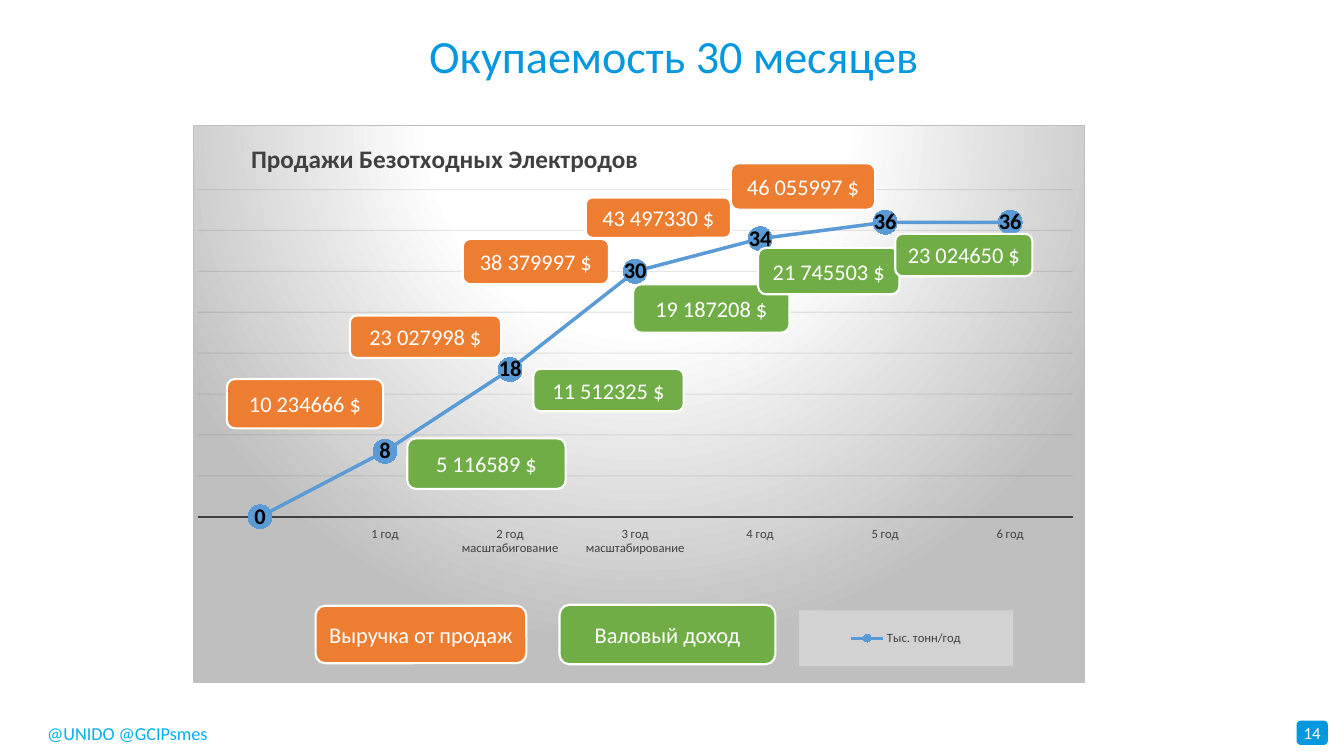
from dataclasses import dataclass

from lxml import etree
from pptx import Presentation
from pptx.chart.data import CategoryChartData
from pptx.dml.color import RGBColor
from pptx.enum.chart import (XL_CHART_TYPE, XL_LABEL_POSITION, XL_LEGEND_POSITION,
                             XL_MARKER_STYLE, XL_TICK_LABEL_POSITION, XL_TICK_MARK)
from pptx.enum.shapes import MSO_SHAPE
from pptx.enum.text import MSO_ANCHOR, PP_ALIGN
from pptx.oxml import parse_xml
from pptx.oxml.ns import qn
from pptx.util import Inches, Pt

LINE_CHART = XL_CHART_TYPE.LINE_MARKERS
CENTER_LABEL = XL_LABEL_POSITION.CENTER
BOTTOM = XL_LEGEND_POSITION.BOTTOM
CIRCLE = XL_MARKER_STYLE.CIRCLE
LOW = XL_TICK_LABEL_POSITION.LOW
NO_TICK = XL_TICK_MARK.NONE
ROUND = MSO_SHAPE.ROUNDED_RECTANGLE
MIDDLE = MSO_ANCHOR.MIDDLE
LEFT, CENTER = PP_ALIGN.LEFT, PP_ALIGN.CENTER
SPACES = ('xmlns:c="http://schemas.openxmlformats.org/drawingml/2006/chart" '
          'xmlns:a="http://schemas.openxmlformats.org/drawingml/2006/main"')


@dataclass(frozen=True)
class Theme:
    """Colours, font and type sizes of the slide."""
    font: str = "Calibri"
    head: str = "0698DF"
    foot: str = "00B0F0"
    white: str = "FFFFFF"
    black: str = "000000"
    ink: str = "404040"
    grid: str = "0D0D0D"
    gray: str = "BFBFBF"
    pale: str = "F2F2F2"
    blue: str = "5B9BD5"
    orange: str = "ED7D31"
    green: str = "70AD47"
    head_size: float = 33
    chart_size: float = 18
    body_size: float = 16
    foot_size: float = 13
    page_size: float = 12
    base_size: float = 10
    axis_size: float = 9


THEME = Theme()
YEARS = ["", "1 год", "2 год масштабигование", "3 год масштабирование",
         "4 год", "5 год", "6 год"]
TONS = [0, 8, 18, 30, 34, 36, 36]
SALES = [
    ("10 234666 $", (0.34, 2.52, 1.55, 0.49)),
    ("23 027998 $", (1.56, 1.89, 1.5, 0.42)),
    ("38 379997 $", (2.68, 1.13, 1.45, 0.45)),
    ("43 497330 $", (3.9, 0.72, 1.44, 0.4)),
    ("46 055997 $", (5.34, 0.38, 1.43, 0.46)),
    ("Выручка от продаж", (1.22, 4.77, 2.09, 0.57)),
]
GROSS = [
    ("5 116589 $", (2.13, 3.11, 1.57, 0.5)),
    ("11 512325 $", (3.38, 2.42, 1.49, 0.42)),
    ("19 187208 $", (4.37, 1.58, 1.55, 0.48)),
    ("21 745503 $", (5.61, 1.22, 1.4, 0.46)),
    ("23 024650 $", (6.97, 1.08, 1.36, 0.42)),
    ("Валовый доход", (3.64, 4.76, 2.14, 0.59)),
]


def rgb(code):
    """Turn a hex code into a colour."""
    return RGBColor.from_string(code)


def style(font, size, color, bold=False):
    """Set face, size, colour and weight of a font."""
    font.name, font.size, font.bold = THEME.font, Pt(size), bold
    font.color.rgb = rgb(color)


def write(frame, text, size, color, align=CENTER, wrap=True):
    """Put one run of text into a frame."""
    frame.word_wrap = wrap
    frame.vertical_anchor = MIDDLE
    para = frame.paragraphs[0]
    para.alignment = align
    run = para.add_run()
    run.text = text
    style(run.font, size, color)
    return para


def add_text(slide, box, *args, **opts):
    """Add a text box and return its paragraph."""
    shape = slide.shapes.add_textbox(*map(Inches, box))
    return write(shape.text_frame, *args, **opts)


def add_badge(slide, box, text, fill, size, edge=None):
    """Add a filled rounded box with centred text."""
    shape = slide.shapes.add_shape(ROUND, *map(Inches, box))
    shape.shadow.inherit = False
    shape.fill.solid()
    shape.fill.fore_color.rgb = rgb(fill)
    if edge:
        shape.line.color.rgb = rgb(edge)
        shape.line.width = Pt(1.5)
    else:
        shape.line.fill.background()
    frame = shape.text_frame
    frame.margin_left = frame.margin_right = 0
    frame.margin_top = frame.margin_bottom = 0
    write(frame, text, size, THEME.white)


def set_place(node, index, spots, inner=False):
    """Give a chart part a manual layout."""
    for old in node.findall(qn("c:layout")):
        node.remove(old)
    target = '<c:layoutTarget val="inner"/>' if inner else ""
    modes = '<c:xMode val="edge"/><c:yMode val="edge"/>'
    sides = "".join(f'<c:{key} val="{val}"/>' for key, val in zip("xywh", spots))
    node.insert(index, parse_xml(
        f"<c:layout {SPACES}><c:manualLayout>{target}{modes}{sides}"
        "</c:manualLayout></c:layout>"))


def set_look(prior, body):
    """Add shape properties after a chart part."""
    prior.addnext(parse_xml(f"<c:spPr {SPACES}>{body}</c:spPr>"))


def style_axes(chart):
    """Format the year axis and the grid."""
    years = chart.category_axis
    years.major_tick_mark = years.minor_tick_mark = NO_TICK
    years.tick_label_position = LOW
    style(years.tick_labels.font, THEME.axis_size, THEME.ink)
    years.format.line.color.rgb = rgb(THEME.ink)
    years.format.line.width = Pt(1.5)
    tons = chart.value_axis
    tons.minimum_scale, tons.maximum_scale, tons.major_unit = 0, 40, 5
    tons.visible = False
    line = tons.major_gridlines.format.line
    line.color.rgb = rgb(THEME.grid)
    line.width = Pt(0.75)
    for tint in chart.element.xpath(".//c:majorGridlines//a:srgbClr"):
        etree.SubElement(tint, qn("a:alpha")).set("val", "10000")


def style_line(chart):
    """Format the line, its markers and its labels."""
    series = chart.plots[0].series[0]
    series.smooth = False
    series.format.line.color.rgb = rgb(THEME.blue)
    series.format.line.width = Pt(2.5)
    mark = series.marker
    mark.style, mark.size = CIRCLE, 17
    mark.format.fill.solid()
    mark.format.fill.fore_color.rgb = rgb(THEME.blue)
    mark.format.line.fill.background()
    labels = series.data_labels
    labels.show_value = True
    labels.position = CENTER_LABEL
    style(labels.font, THEME.body_size, THEME.black, True)


def style_frame(chart):
    """Set title, legend, plot area and backdrop."""
    chart.has_title = True
    run = chart.chart_title.text_frame.paragraphs[0].add_run()
    run.text = "Продажи Безотходных Электродов"
    style(run.font, THEME.chart_size, THEME.ink, True)
    chart.chart_title.include_in_layout = False
    chart.has_legend = True
    legend = chart.legend
    legend.position = BOTTOM
    legend.include_in_layout = False
    style(legend.font, THEME.axis_size, THEME.ink)
    root = chart.element.find(qn("c:chart"))
    key = root.find(qn("c:legend"))
    set_place(root.find(qn("c:title")), 1, (0.06, 0.02))
    set_place(key, 1, (0.68, 0.87, 0.24, 0.1))
    set_place(root.find(qn("c:plotArea")), 0, (0.005, 0.115, 0.982, 0.587), True)
    set_look(key.find(qn("c:overlay")),
             f'<a:solidFill><a:srgbClr val="{THEME.pale}"><a:alpha val="39000"/>'
             "</a:srgbClr></a:solidFill><a:ln><a:noFill/></a:ln>")
    stops = "".join(f'<a:gs pos="{pos}"><a:srgbClr val="{tint}"/></a:gs>' for pos, tint in
                    ((0, THEME.white), (39000, THEME.white), (100000, THEME.gray)))
    set_look(root, f'<a:gradFill><a:gsLst>{stops}</a:gsLst><a:path path="circle">'
             '<a:fillToRect l="50000" t="-80000" r="50000" b="180000"/></a:path></a:gradFill>'
             f'<a:ln w="9525"><a:solidFill><a:srgbClr val="{THEME.gray}"/></a:solidFill></a:ln>')


def add_sales(slide, box):
    """Add the sales chart with its money badges."""
    data = CategoryChartData()
    data.categories = YEARS
    data.add_series("Тыс. тонн/год", TONS)
    chart = slide.shapes.add_chart(LINE_CHART, *map(Inches, box), data).chart
    style(chart.font, THEME.base_size, THEME.black)
    chart.plots[0].vary_by_categories = False
    style_axes(chart)
    style_line(chart)
    style_frame(chart)
    for fill, group in ((THEME.orange, SALES), (THEME.green, GROSS)):
        for text, (left, top, wide, high) in group:
            spot = (box[0] + left, box[1] + top, wide, high)
            add_badge(slide, spot, text, fill, THEME.body_size, THEME.white)


def add_foot(slide, box):
    """Add the handles and the page number."""
    left, top, wide, high = box
    add_text(slide, (left, top, 1.81, high), "@UNIDO @GCIPsmes",
             THEME.foot_size, THEME.foot, LEFT, False)
    add_badge(slide, (left + wide - 0.31, top + 0.04, 0.31, 0.24), "14",
              THEME.head, THEME.page_size)


def main():
    """Build and save the slide."""
    deck = Presentation()
    deck.slide_width, deck.slide_height = Inches(13.33), Inches(7.5)
    slide = deck.slides.add_slide(deck.slide_layouts[6])
    add_foot(slide, (0.37, 7.11, 12.8, 0.32))
    head = add_text(slide, (3.13, 0.21, 7.11, 0.75), "Окупаемость 30 месяцев",
                    THEME.head_size, THEME.head)
    head.line_spacing = 0.9
    add_sales(slide, (1.91, 1.24, 8.85, 5.54))
    deck.save("out.pptx")


if __name__ == "__main__":
    main()
